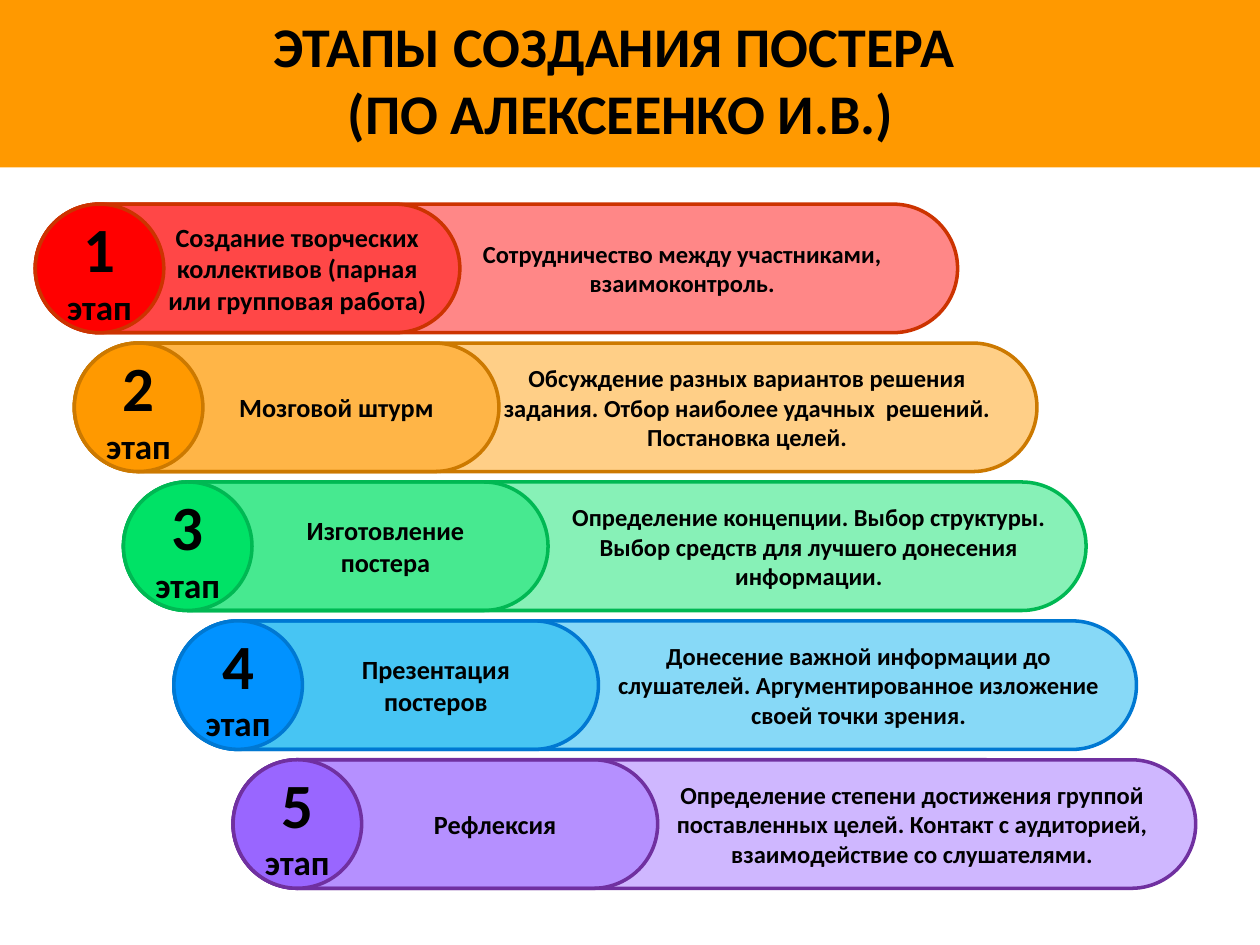
from dataclasses import dataclass

from lxml.etree import SubElement
from pptx import Presentation
from pptx.dml.color import RGBColor
from pptx.enum.shapes import MSO_SHAPE
from pptx.enum.text import MSO_ANCHOR, PP_ALIGN
from pptx.oxml.ns import qn
from pptx.util import Inches, Pt


@dataclass(frozen=True)
class Theme:
    font: str = "Calibri"
    text: str = "000000"
    banner: str = "FF9900"
    title_size: int = 32
    number_size: int = 36
    word_size: int = 20
    name_size: int = 15
    detail_size: int = 14
    line_width: int = 2
    bar_opacity: int = 47


@dataclass(frozen=True)
class Stage:
    name: str
    detail: str
    left: float
    fill: str
    line: str
    circle_fill: str
    detail_indent: float
    width: float = 7.64


THEME = Theme()
FIRST_TOP = 1.62
PITCH = 1.1025
HEIGHT = 1.02
NAME_WIDTH = 3.37
NAME_INDENT = 0.79

STAGES = [
    Stage("Создание творческих коллективов (парная или групповая работа)",
          "Сотрудничество между участниками, взаимоконтроль.",
          0.28, "FF0000", "CC3300", "FF0000", 2.95, width=7.32),
    Stage("Мозговой штурм",
          "Обсуждение разных вариантов решения задания. "
          "Отбор наиболее удачных  решений. Постановка целей.",
          0.59, "FF9900", "CC7900", "FF9900", 3.04),
    Stage("Изготовление\nпостера",
          "Определение концепции. Выбор структуры. "
          "Выбор средств для лучшего донесения информации.",
          0.98, "00E266", "00B853", "00E266", 3.24),
    Stage("Презентация\nпостеров",
          "Донесение важной информации до слушателей. "
          "Аргументированное изложение своей точки зрения.",
          1.38, "00B0F0", "0078D2", "0192FF", 3.23),
    Stage("Рефлексия",
          "Определение степени достижения группой поставленных целей. "
          "Контакт с аудиторией, взаимодействие со слушателями.",
          1.85, "9966FF", "7030A0", "9966FF", 3.14),
]


def write_text(shape, text: str, sizes: list[int], indent: float = 0,
               wrap: bool = True) -> None:
    """Write centred bold text; the last size serves all remaining paragraphs."""
    frame = shape.text_frame
    frame.text = text
    frame.word_wrap = wrap
    frame.vertical_anchor = MSO_ANCHOR.MIDDLE
    for index, para in enumerate(frame.paragraphs):
        para.alignment = PP_ALIGN.CENTER
        if indent:
            properties = para._p.get_or_add_pPr()
            properties.set("marL", str(Inches(indent)))
            properties.set("indent", "0")
        for span in para.runs:
            span.font.name = THEME.font
            span.font.size = Pt(sizes[min(index, len(sizes) - 1)])
            span.font.bold = True
            span.font.color.rgb = RGBColor.from_string(THEME.text)


def add_filled(page, kind: MSO_SHAPE, left: float, top: float, width: float,
               height: float, fill: str, line: str | None = None):
    shape = page.shapes.add_shape(
        kind, Inches(left), Inches(top), Inches(width), Inches(height))
    shape.shadow.inherit = False
    shape.fill.solid()
    shape.fill.fore_color.rgb = RGBColor.from_string(fill)
    if line:
        shape.line.color.rgb = RGBColor.from_string(line)
        shape.line.width = Pt(THEME.line_width)
    else:
        shape.line.fill.background()
    return shape


def add_bar(page, stage: Stage, top: float, width: float, text: str,
            size: int, indent: float) -> None:
    """Draw a translucent bar with fully rounded ends."""
    bar = add_filled(page, MSO_SHAPE.ROUNDED_RECTANGLE, stage.left, top,
                     width, HEIGHT, stage.fill, stage.line)
    bar.adjustments[0] = 0.5
    color = bar._element.spPr.find(qn("a:solidFill")).find(qn("a:srgbClr"))
    SubElement(color, qn("a:alpha")).set("val", str(THEME.bar_opacity * 1000))
    write_text(bar, text, [size], indent)


def add_stage(page, number: int, stage: Stage) -> None:
    top = FIRST_TOP + (number - 1) * PITCH
    add_bar(page, stage, top, stage.width, stage.detail,
            THEME.detail_size, stage.detail_indent)
    add_bar(page, stage, top, NAME_WIDTH, stage.name,
            THEME.name_size, NAME_INDENT)
    circle = add_filled(page, MSO_SHAPE.OVAL, stage.left, top, HEIGHT, HEIGHT,
                        stage.circle_fill, stage.line)
    write_text(circle, f"{number}\nэтап",
               [THEME.number_size, THEME.word_size], wrap=False)


def add_title(page) -> None:
    add_filled(page, MSO_SHAPE.RECTANGLE, 0, 0, 10, 1.33, THEME.banner)
    box = page.shapes.add_textbox(
        Inches(1.48), Inches(0), Inches(6.89), Inches(1.25))
    write_text(box, "ЭТАПЫ СОЗДАНИЯ ПОСТЕРА \v(ПО АЛЕКСЕЕНКО И.В.)",
               [THEME.title_size])


def main() -> None:
    deck = Presentation()
    deck.slide_width, deck.slide_height = Inches(10), Inches(7.5)
    page = deck.slides.add_slide(deck.slide_layouts[6])
    add_title(page)
    for number, stage in enumerate(STAGES, start=1):
        add_stage(page, number, stage)
    deck.save("out.pptx")


if __name__ == "__main__":
    main()
